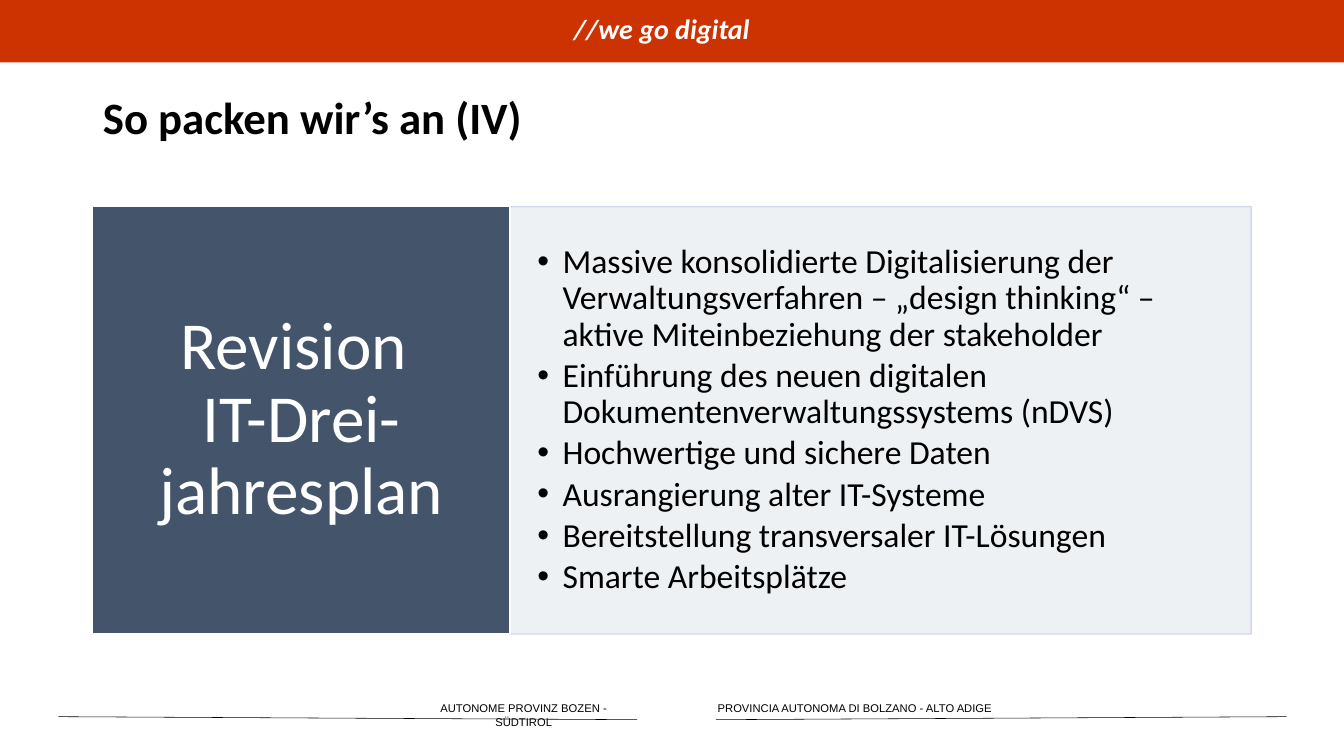
from dataclasses import dataclass

from lxml import etree
from pptx import Presentation
from pptx import util as u
from pptx.dml.color import RGBColor
from pptx.enum import shapes, text
from pptx.oxml.ns import qn


@dataclass(frozen=True)
class Theme:
    banner: str = "CC3300"
    topic: str = "44546A"
    panel: str = "EDF0F3"
    panel_edge: str = "CFD5EA"
    ink: str = "000000"
    paper: str = "FFFFFF"
    main_font: str = "Calibri"
    footer_font: str = "Arial"
    banner_size: int = 20
    title_size: int = 32
    topic_size: int = 48
    list_size: int = 24
    footer_size: int = 8


class SlideBuilder:
    def __init__(self, slide, theme):
        self.slide = slide
        self.theme = theme

    def place(self, shape, box):
        shape.left, shape.top, shape.width, shape.height = map(u.Inches, box)

    def frame(self, shape, insets, anchor=text.MSO_ANCHOR.MIDDLE):
        frame = shape.text_frame
        frame.word_wrap = True
        frame.auto_size = text.MSO_AUTO_SIZE.NONE
        frame.vertical_anchor = anchor
        horizontal, vertical, right = insets
        frame.margin_left, frame.margin_right = u.Inches(horizontal), u.Inches(right)
        frame.margin_top = frame.margin_bottom = u.Inches(vertical)
        return frame

    def style(self, paragraph, size, color, align=text.PP_ALIGN.CENTER,
              spacing=0.9, font=None, bold=False, italic=False):
        paragraph.alignment = align
        paragraph.line_spacing = spacing
        paragraph.space_before = u.Pt(0)
        paragraph.font.name = font or self.theme.main_font
        paragraph.font.size = u.Pt(size)
        paragraph.font.bold = bold
        paragraph.font.italic = italic
        paragraph.font.color.rgb = RGBColor.from_string(color)

    def fill(self, shape, color, edge=None):
        shape.fill.solid()
        shape.fill.fore_color.rgb = RGBColor.from_string(color)
        if edge:
            shape.line.color.rgb = RGBColor.from_string(edge)
            shape.line.width = u.Pt(1)
        else:
            shape.line.fill.background()

    def title(self, wording, box):
        heading = self.slide.shapes.title
        self.place(heading, box)
        frame = self.frame(heading, (0.1, 0.05, 0.1))
        frame.text = wording
        self.style(frame.paragraphs[0], self.theme.title_size, self.theme.ink,
                   text.PP_ALIGN.LEFT, bold=True)

    def block(self, wording, box, color, size, insets, edge=None, **style):
        block = self.slide.shapes.add_shape(
            shapes.MSO_SHAPE.RECTANGLE, *map(u.Inches, box))
        block.shadow.inherit = False
        self.fill(block, color, edge)
        frame = self.frame(block, insets)
        frame.text = wording
        self.style(frame.paragraphs[0], size, self.theme.paper, **style)

    def bullets(self, items, box):
        panel = self.slide.placeholders[1]
        self.place(panel, box)
        self.fill(panel, self.theme.panel, self.theme.panel_edge)
        for color in panel.element.spPr.iter(qn("a:srgbClr")):
            etree.SubElement(color, qn("a:alpha"), val="90000")
        frame = self.frame(panel, (0.27, 0.14, 0.27))
        frame.text = "\n".join(items)
        for paragraph in frame.paragraphs:
            properties = paragraph._p.get_or_add_pPr()
            properties.set("marL", str(u.Inches(0.25)))
            properties.set("indent", str(u.Inches(-0.25)))
            etree.SubElement(properties, qn("a:buChar"), char="•")
            self.style(paragraph, self.theme.list_size, self.theme.ink,
                       text.PP_ALIGN.LEFT)
            paragraph.space_after = u.Pt(3.6)

    def label(self, wording, box):
        label = self.slide.shapes.add_textbox(*map(u.Inches, box))
        frame = self.frame(label, (0.1, 0.05, 0.1), text.MSO_ANCHOR.TOP)
        frame.text = wording
        self.style(frame.paragraphs[0], self.theme.footer_size, self.theme.ink,
                   spacing=1.0, font=self.theme.footer_font)

    def rule(self, start, end):
        rule = self.slide.shapes.add_connector(
            shapes.MSO_CONNECTOR.STRAIGHT, *map(u.Inches, start + end))
        rule.line.color.rgb = RGBColor.from_string(self.theme.ink)
        rule.line.width = u.Pt(0.4)
        etree.SubElement(rule._element.spPr, qn("a:effectLst"))


def main():
    deck = Presentation()
    deck.slide_width, deck.slide_height = u.Inches(13.33), u.Inches(7.5)
    theme = Theme()
    page = SlideBuilder(deck.slides.add_slide(deck.slide_layouts[1]), theme)

    page.block("//we go digital", (0, 0, 13.33, 0.62), theme.banner,
               theme.banner_size, (0, 0, 0.2), spacing=u.Pt(20),
               bold=True, italic=True)
    page.title("So packen wir’s an (IV)", (0.92, 0.91, 11.5, 0.56))
    page.bullets([
        "Massive konsolidierte Digitalisierung der Verwaltungsverfahren – "
        "„design thinking“ – aktive Miteinbeziehung der stakeholder",
        "Einführung des neuen digitalen Dokumentenverwaltungssystems (nDVS)",
        "Hochwertige und sichere Daten",
        "Ausrangierung alter IT-Systeme",
        "Bereitstellung transversaler IT-Lösungen",
        "Smarte Arbeitsplätze",
    ], (5.06, 2.05, 7.35, 4.24))
    page.block("Revision \vIT-Drei-jahresplan", (0.92, 2.05, 4.14, 4.24),
               theme.topic, theme.topic_size, (0.2, 0.1, 0.2), edge=theme.paper)

    page.rule((0.58, 7.11), (6.32, 7.14))
    page.label("AUTONOME PROVINZ BOZEN - SÜDTIROL", (3.98, 6.91, 2.43, 0.23))
    page.label("PROVINCIA AUTONOMA DI BOLZANO - ALTO ADIGE", (7, 6.91, 2.96, 0.23))
    page.rule((7.1, 7.14), (12.76, 7.11))

    deck.save("out.pptx")


if __name__ == "__main__":
    main()
